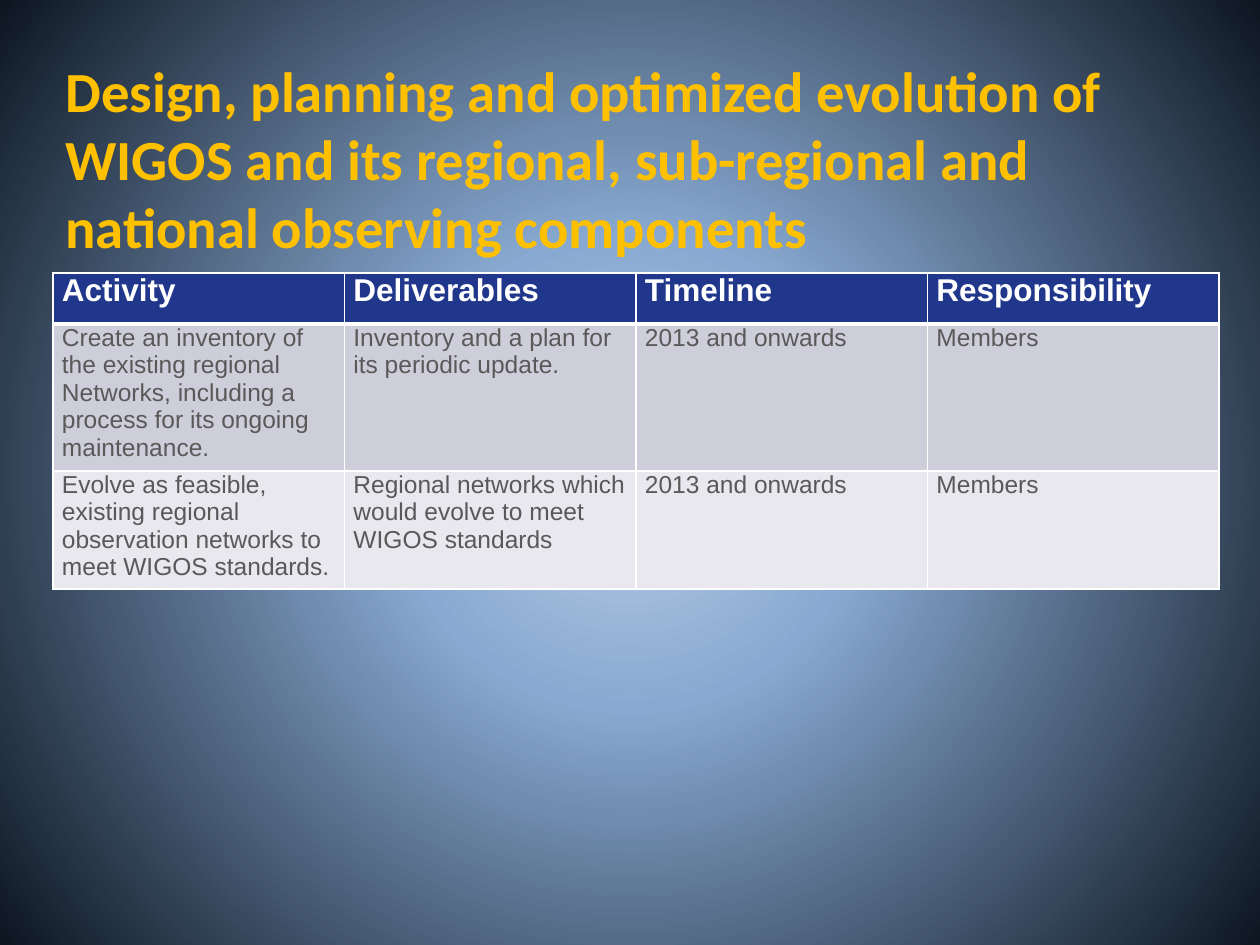
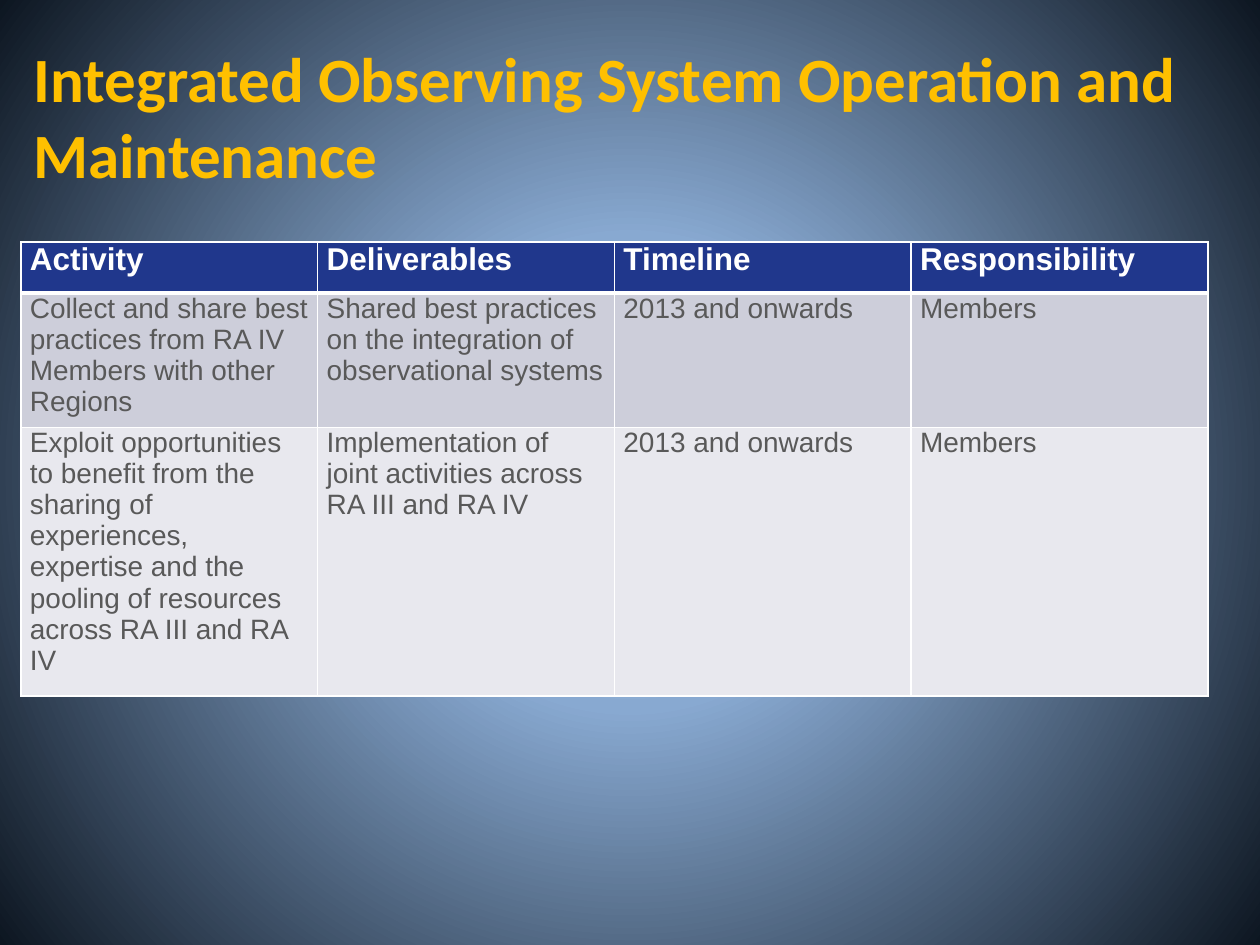
from lxml import etree
from pptx import Presentation
from pptx import util as u
from pptx.dml.color import RGBColor
from pptx.enum import text
from pptx.oxml import ns

HEADINGS = ["Activity", "Deliverables", "Timeline", "Responsibility"]
PLANS = [
    {
        "title": "Design, planning and optimized evolution of WIGOS and its regional, "
                 "sub-regional and national observing components",
        "title_size": 32.4,
        "title_at": (53, 53, 1144, 210),
        "body_size": 14,
        "table_at": (53, 273, 1166),
        "heights": (51, 138, 110),
        "rows": [
            ["Create an inventory of the existing regional Networks, including a process "
             "for its ongoing maintenance.",
             "Inventory and a plan for its periodic update.", "2013 and onwards", "Members"],
            ["Evolve as feasible, existing regional observation networks to meet WIGOS standards.",
             "Regional networks which would evolve to meet WIGOS standards",
             "2013 and onwards", "Members"],
        ],
    },
    {
        "title": "Integrated Observing System Operation and Maintenance",
        "title_size": 36,
        "title_at": (21, 21, 1187, 189),
        "body_size": 16,
        "table_at": (21, 242, 1187),
        "heights": (51, 125, 249),
        "rows": [
            ["Collect and share best practices from RA IV Members with other Regions",
             "Shared best practices on the integration of observational systems",
             "2013 and onwards", "Members"],
            ["Exploit opportunities to benefit from the sharing of experiences, expertise "
             "and the pooling of resources across RA III and RA IV",
             "Implementation of joint activities across RA III and RA IV",
             "2013 and onwards", "Members"],
        ],
    },
]
GOLD, WHITE, GREY = "FFC000", "FFFFFF", "595959"
ROW_FILLS = ["20378C", "CDCEDA", "E8E8EE"]
GLOW = [(0, "BACDE4"), (30, "88A9D1"), (100, "0D1621")]
HEADING_SIZE = 18
CELL_INSET = 9
THIN, THICK = 1, 3


def px(length):
    return u.Emu(round(length * 914400 / 126))


def colour(code):
    return RGBColor.from_string(code)


def add_element(parent, tag, **attributes):
    return etree.SubElement(parent, ns.qn(tag), {key: str(value) for key, value in attributes.items()})


def paint_background(master):
    master.background.fill.solid()
    properties = master.element.find(".//" + ns.qn("p:bgPr"))
    gradient = etree.Element(ns.qn("a:gradFill"), rotWithShape="1")
    stops = add_element(gradient, "a:gsLst")
    for position, code in GLOW:
        stop = add_element(stops, "a:gs", pos=position * 1000)
        add_element(stop, "a:srgbClr", val=code)
    circle = add_element(gradient, "a:path", path="circle")
    add_element(circle, "a:fillToRect", l=50000, t=50000, r=50000, b=50000)
    properties.replace(properties.find(ns.qn("a:solidFill")), gradient)


def add_span(para, words, font, size, code, bold):
    span = para.add_run()
    span.text = words
    span.font.name = font
    span.font.size = u.Pt(size)
    span.font.bold = bold
    span.font.color.rgb = colour(code)


def add_title(page, plan):
    box = page.shapes.add_textbox(*map(px, plan["title_at"]))
    frame = box.text_frame
    frame.word_wrap = True
    frame.vertical_anchor = text.MSO_ANCHOR.MIDDLE
    add_span(frame.paragraphs[0], plan["title"], "Calibri", plan["title_size"], GOLD, True)


def add_borders(cell, row):
    top = THICK if row == 1 else THIN
    bottom = THICK if row == 0 else THIN
    properties = cell._tc.get_or_add_tcPr()
    for side, width in (("L", THIN), ("R", THIN), ("T", top), ("B", bottom)):
        line = add_element(properties, f"a:ln{side}", w=u.Pt(width))
        add_element(add_element(line, "a:solidFill"), "a:srgbClr", val=WHITE)


def add_activities(page, plan):
    left, top, width = plan["table_at"]
    heights = plan["heights"]
    rows = [HEADINGS] + plan["rows"]
    frame = page.shapes.add_table(len(rows), len(HEADINGS), px(left), px(top), px(width), px(sum(heights)))
    table = frame.table
    for column in table.columns:
        column.width = px(width / len(HEADINGS))
    for row, entries in enumerate(rows):
        table.rows[row].height = px(heights[row])
        heading = row == 0
        for column, words in enumerate(entries):
            cell = table.cell(row, column)
            cell.margin_left = cell.margin_right = px(CELL_INSET)
            cell.margin_top = cell.margin_bottom = 0
            add_borders(cell, row)
            cell.fill.solid()
            cell.fill.fore_color.rgb = colour(ROW_FILLS[row])
            para = cell.text_frame.paragraphs[0]
            if heading:
                para.alignment = text.PP_ALIGN.JUSTIFY
            add_span(para, words, "Arial", HEADING_SIZE if heading else plan["body_size"],
                     WHITE if heading else GREY, heading)


def main():
    deck = Presentation()
    deck.slide_width, deck.slide_height = px(1260), px(945)
    paint_background(deck.slide_master)
    for plan in PLANS:
        page = deck.slides.add_slide(deck.slide_layouts[6])
        add_title(page, plan)
        add_activities(page, plan)
    deck.save("out.pptx")


if __name__ == "__main__":
    main()
